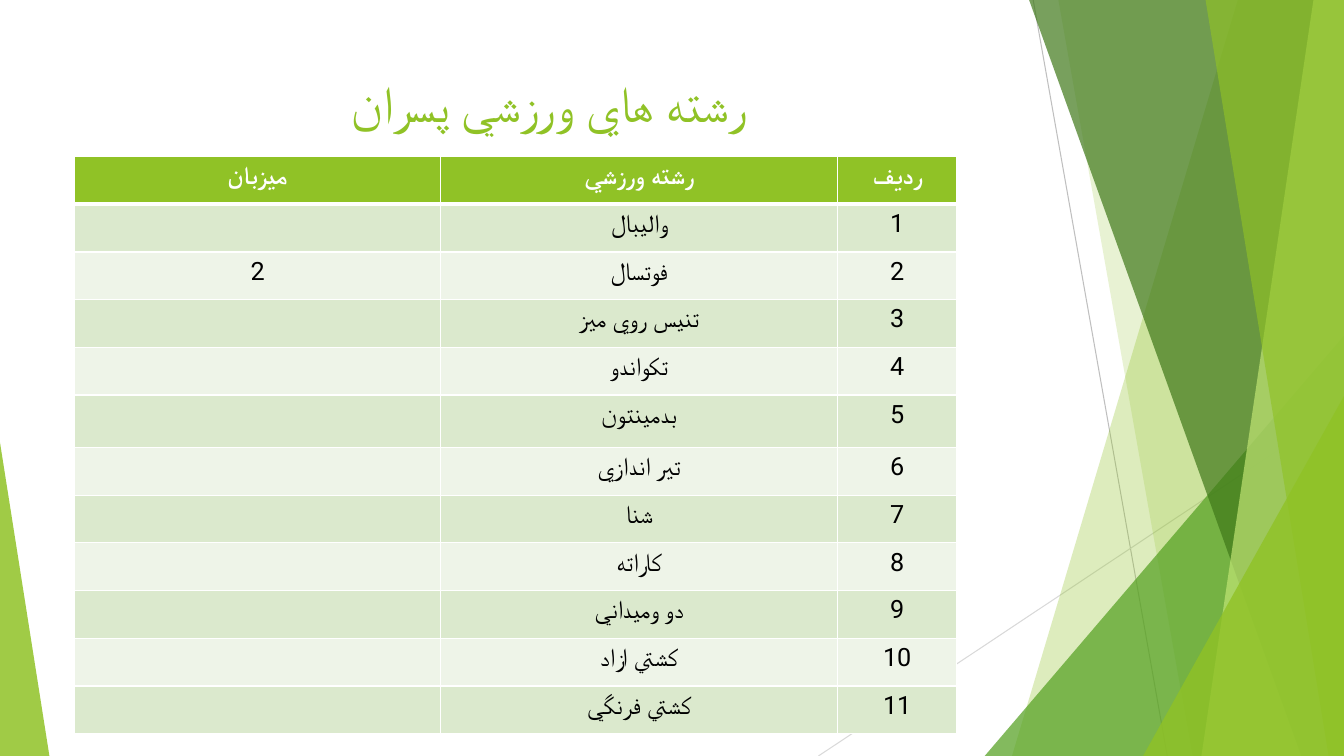
from dataclasses import dataclass

from lxml.etree import SubElement
from pptx import Presentation
from pptx.dml.color import RGBColor
from pptx.enum.shapes import MSO_CONNECTOR, MSO_SHAPE
from pptx.enum.text import MSO_ANCHOR, PP_ALIGN
from pptx.oxml import parse_xml
from pptx.oxml.ns import nsdecls, qn
from pptx.shapes.autoshape import Shape
from pptx.slide import Slide
from pptx.table import _Cell
from pptx.text.text import TextFrame
from pptx.util import Pt

PAGE_WIDTH = 960
PAGE_HEIGHT = 540


@dataclass(frozen=True)
class Theme:
    font: str = "Roboto"
    title_size: float = 36
    table_size: float = 18
    green: str = "90C226"
    leaf: str = "54A021"
    forest: str = "3F7819"
    lime: str = "C0E474"
    white: str = "FFFFFF"
    black: str = "000000"
    band_dark: str = "DBE9CD"
    band_light: str = "EEF4E8"
    line_dark: str = "BFBFBF"
    line_light: str = "D9D9D9"


THEME = Theme()


@dataclass(frozen=True)
class Ray:
    start: tuple[float, float]
    end: tuple[float, float]
    color: str


@dataclass(frozen=True)
class Blade:
    """A full-height panel from a slanted left side to the page's right edge."""
    top_x: float
    bottom_x: float
    color: str
    opacity: int


@dataclass(frozen=True)
class Corner:
    """A right triangle standing on the page's bottom edge."""
    left: float
    top: float
    width: float
    apex: float
    color: str
    opacity: int


RAYS = [
    Ray((738, 0), (833.8, PAGE_HEIGHT), THEME.line_dark),
    Ray((PAGE_WIDTH, 290.2), (584.6, PAGE_HEIGHT), THEME.line_light),
]
FACETS = [
    Blade(884.2, 722.9, THEME.green, 30),
    Blade(756, 851.8, THEME.green, 20),
    Corner(703.4, 239.8, 256.6, 1, THEME.leaf, 72),
    Blade(735.1, 929.5, THEME.forest, 70),
    Blade(938.2, 858.2, THEME.lime, 70),
    Blade(861.1, 949, THEME.green, 65),
    Corner(816.5, 283, 143.5, 1, THEME.green, 80),
    Corner(0, 316.1, 35.3, 0, THEME.green, 85),
]

TITLE = "رشته هاي ورزشي پسران"
HEADERS = ["ميزبان", "رشته ورزشي", "رديف"]
SPORTS = [
    "واليبال", "فوتسال", "تنيس روي ميز", "تکواندو", "بدمينتون", "تير اندازي",
    "شنا", "کاراته", "دو وميداني", "کشتي ازاد", "کشتي فرنگي",
]
HOSTS = {"فوتسال": "2"}
COLUMN_WIDTHS = [261.4, 283.7, 85]
ROW_HEIGHT = 34.1
TALL_ROW = 5
TALL_ROW_HEIGHT = 37.5


def draw_ray(page: Slide, ray: Ray) -> None:
    points = [Pt(value) for value in (*ray.start, *ray.end)]
    line = page.shapes.add_connector(MSO_CONNECTOR.STRAIGHT, *points)
    line.line.color.rgb = RGBColor.from_string(ray.color)
    line.line.width = Pt(0.75)
    SubElement(line._element.spPr, qn("a:effectLst"))


def paint(shape: Shape, color: str, opacity: int) -> None:
    shape.shadow.inherit = False
    shape.line.fill.background()
    shape.fill.solid()
    shape.fill.fore_color.rgb = RGBColor.from_string(color)
    fill_color = shape._element.spPr.find(f"{qn('a:solidFill')}/{qn('a:srgbClr')}")
    SubElement(fill_color, qn("a:alpha"), val=str(opacity * 1000))


def draw_facet(page: Slide, facet: Blade | Corner) -> None:
    if isinstance(facet, Blade):
        outline = page.shapes.build_freeform(Pt(facet.top_x), 0)
        corners = [(PAGE_WIDTH, 0), (PAGE_WIDTH, PAGE_HEIGHT), (facet.bottom_x, PAGE_HEIGHT)]
        outline.add_line_segments([(Pt(x), Pt(y)) for x, y in corners], close=True)
        shape = outline.convert_to_shape()
    else:
        shape = page.shapes.add_shape(
            MSO_SHAPE.ISOSCELES_TRIANGLE, Pt(facet.left), Pt(facet.top),
            Pt(facet.width), Pt(PAGE_HEIGHT - facet.top),
        )
        shape.adjustments[0] = facet.apex
    paint(shape, facet.color, facet.opacity)


def write(frame: TextFrame, text: str, size: float, color: str, bold: bool = False) -> None:
    """Set one centred right-to-left paragraph, in Latin and Arabic script alike."""
    frame.text = text
    paragraph = frame.paragraphs[0]
    paragraph.alignment = PP_ALIGN.CENTER
    paragraph._p.get_or_add_pPr().set("rtl", "1")
    paragraph.font.size = Pt(size)
    for span in paragraph.runs:
        span.font.size = Pt(size)
        span.font.bold = bold
        span.font.name = THEME.font
        span.font.color.rgb = RGBColor.from_string(color)
        SubElement(span._r.get_or_add_rPr(), qn("a:cs"), typeface=THEME.font)


def add_title(page: Slide) -> None:
    box = page.shapes.add_textbox(Pt(53.3), Pt(48.2), Pt(676.8), Pt(103.7))
    box.text_frame.word_wrap = True
    box.text_frame.vertical_anchor = MSO_ANCHOR.TOP
    write(box.text_frame, TITLE, THEME.title_size, THEME.green)


def set_borders(cell: _Cell, top: float, bottom: float) -> None:
    widths = {"lnL": 1, "lnR": 1, "lnT": top, "lnB": bottom}
    properties = cell._tc.get_or_add_tcPr()
    for index, (side, width) in enumerate(widths.items()):
        properties.insert(index, parse_xml(
            f'<a:{side} {nsdecls("a")} w="{Pt(width)}"><a:solidFill>'
            f'<a:srgbClr val="{THEME.white}"/></a:solidFill></a:{side}>'
        ))


def add_sports_table(page: Slide) -> None:
    rows = [HEADERS] + [
        [HOSTS.get(sport, ""), sport, str(number)]
        for number, sport in enumerate(SPORTS, start=1)
    ]
    heights = [TALL_ROW_HEIGHT if index == TALL_ROW else ROW_HEIGHT for index in range(len(rows))]
    table = page.shapes.add_table(
        len(rows), len(HEADERS), Pt(53.3), Pt(111.8), Pt(sum(COLUMN_WIDTHS)), Pt(sum(heights)),
    ).table
    for column, width in zip(table.columns, COLUMN_WIDTHS):
        column.width = Pt(width)
    for row_index, (values, height) in enumerate(zip(rows, heights)):
        table.rows[row_index].height = Pt(height)
        header = row_index == 0
        band = THEME.band_dark if row_index % 2 else THEME.band_light
        for column_index, value in enumerate(values):
            cell = table.cell(row_index, column_index)
            cell.fill.solid()
            cell.fill.fore_color.rgb = RGBColor.from_string(THEME.green if header else band)
            set_borders(cell, top=3 if row_index == 1 else 1, bottom=3 if header else 1)
            text_color = THEME.white if header else THEME.black
            write(cell.text_frame, value, THEME.table_size, text_color, bold=header)


def main() -> None:
    deck = Presentation()
    deck.slide_width = Pt(PAGE_WIDTH)
    deck.slide_height = Pt(PAGE_HEIGHT)
    page = deck.slides.add_slide(deck.slide_layouts[6])
    for ray in RAYS:
        draw_ray(page, ray)
    for facet in FACETS:
        draw_facet(page, facet)
    add_title(page)
    add_sports_table(page)
    deck.save("out.pptx")


if __name__ == "__main__":
    main()
